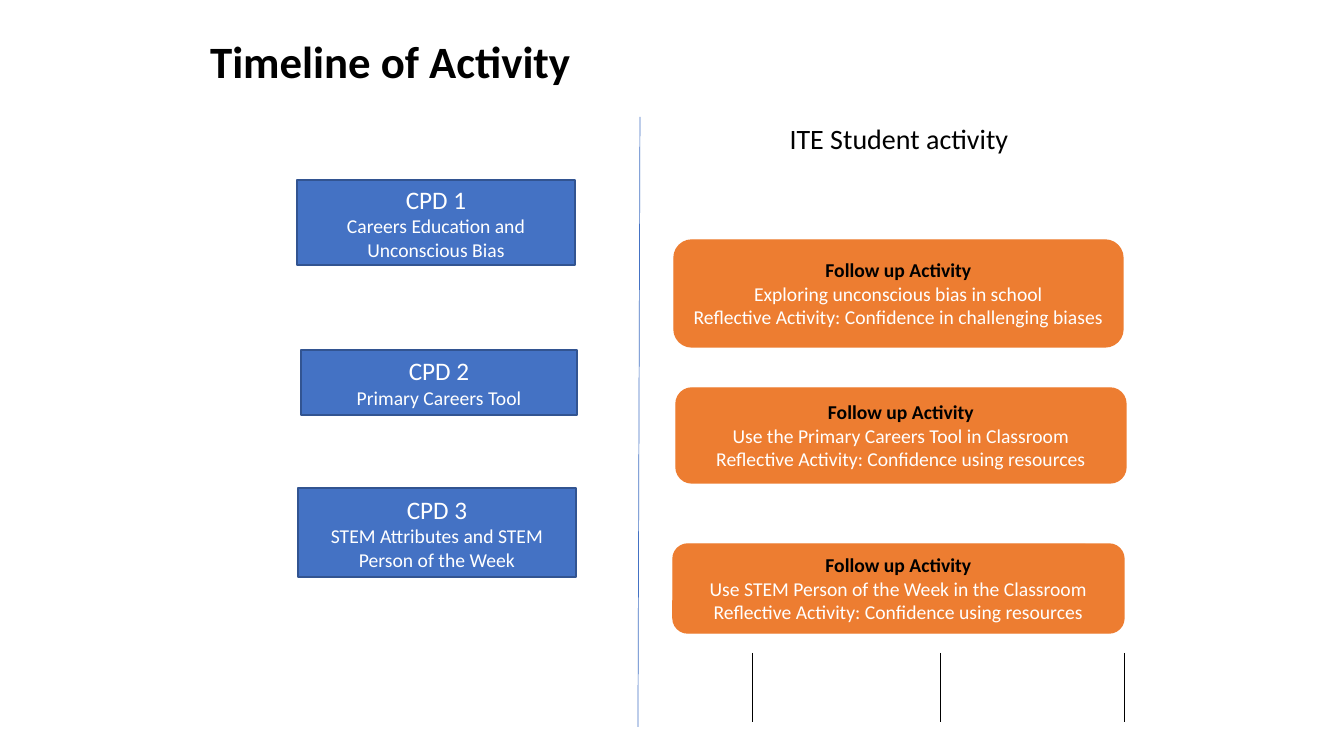
from lxml import etree
from pptx import Presentation
from pptx import util as u
from pptx.dml.color import RGBColor
from pptx.enum import shapes, text
from pptx.oxml import ns

PX = 914400 / 100.8
FONT = "Calibri"
BLACK, WHITE = "000000", "FFFFFF"
BLUE, BLUE_EDGE, ORANGE = "4472C4", "325491", "ED7D31"

TITLE = ("Timeline of Activity", (200, 29, 747, 126))
HEADING = ("ITE Student activity", (726, 117, 346, 44))

# box (left, top, width, height), heading, lines below it
SESSIONS = [
    ((297, 180, 278, 85), "CPD 1", ["Careers Education and Unconscious Bias"]),
    ((301, 350, 276, 65), "CPD 2", ["Primary Careers Tool"]),
    ((298, 488, 278, 89), "CPD 3", ["STEM Attributes and STEM Person of the Week"]),
]
FOLLOW_UPS = [
    ((674, 240, 449, 107), "Follow up Activity",
     ["Exploring unconscious bias in school",
      "Reflective Activity: Confidence in challenging biases"]),
    ((676, 388, 450, 95), "Follow up Activity",
     ["Use the Primary Careers Tool in Classroom",
      "Reflective Activity: Confidence using resources"]),
    ((673, 544, 451, 89), "Follow up Activity",
     ["Use STEM Person of the Week in the Classroom",
      "Reflective Activity: Confidence using resources"]),
]
DIVIDER = (640, 117, 638, 727)
TICKS_X, TICKS_Y = (752, 940, 1124), (653, 722)


def px(*lengths):
    return [u.Emu(round(length * PX)) for length in lengths]


def rgb(colour):
    return RGBColor.from_string(colour)


def write(frame, lines, align=text.PP_ALIGN.CENTER, anchor=text.MSO_ANCHOR.MIDDLE):
    """Fill a text frame with one paragraph per (words, size, colour, bold)."""
    frame.word_wrap = True
    frame.auto_size = text.MSO_AUTO_SIZE.NONE
    frame.vertical_anchor = anchor
    for i, (words, size, colour, bold) in enumerate(lines):
        para = frame.add_paragraph() if i else frame.paragraphs[0]
        para.alignment = align
        span = para.add_run()
        span.text = words
        span.font.name = FONT
        span.font.size = u.Pt(size)
        span.font.bold = bold
        span.font.color.rgb = rgb(colour)


def add_box(page, kind, place, fill, edge, lines):
    box = page.shapes.add_shape(kind, *px(*place))
    box.shadow.inherit = False
    box.fill.solid()
    box.fill.fore_color.rgb = rgb(fill)
    box.line.color.rgb = rgb(edge)
    box.line.width = u.Pt(1)
    write(box.text_frame, lines)


def add_line(page, ends, colour):
    line = page.shapes.add_connector(shapes.MSO_CONNECTOR.STRAIGHT, *px(*ends))
    line.line.color.rgb = rgb(colour)
    line.line.width = u.Pt(0.5)
    etree.SubElement(line.element.spPr, ns.qn("a:effectLst"))


def main():
    deck = Presentation()
    deck.slide_width, deck.slide_height = px(1344, 756)
    page = deck.slides.add_slide(deck.slide_layouts.get_by_name("Title Only"))

    words, place = TITLE
    title = page.shapes.title
    title.left, title.top, title.width, title.height = px(*place)
    write(title.text_frame, [(words, 32, BLACK, True)],
          text.PP_ALIGN.LEFT, text.MSO_ANCHOR.TOP)

    for x in TICKS_X:
        add_line(page, (x, TICKS_Y[0], x, TICKS_Y[1]), BLACK)
    add_line(page, DIVIDER, BLUE)

    for place, head, details in SESSIONS:
        lines = [(head, 18, WHITE, False)] + [(d, 14, WHITE, False) for d in details]
        add_box(page, shapes.MSO_SHAPE.RECTANGLE, place, BLUE, BLUE_EDGE, lines)
    for place, head, details in FOLLOW_UPS:
        lines = [(head, 14, BLACK, True)] + [(d, 14, WHITE, False) for d in details]
        add_box(page, shapes.MSO_SHAPE.ROUNDED_RECTANGLE, place, ORANGE, ORANGE, lines)

    words, place = HEADING
    heading = page.shapes.add_textbox(*px(*place))
    write(heading.text_frame, [(words, 20, BLACK, False)], anchor=text.MSO_ANCHOR.TOP)

    deck.save("out.pptx")


if __name__ == "__main__":
    main()
